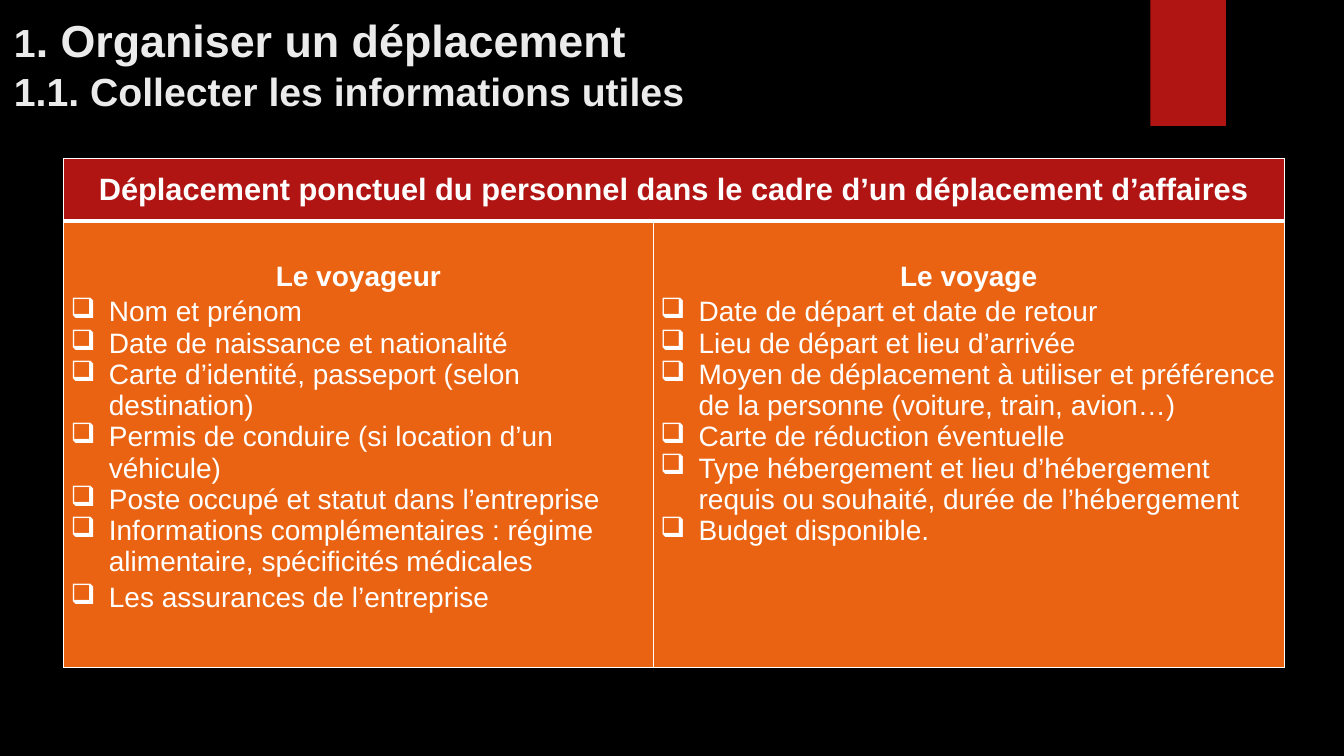
from lxml.etree import SubElement
from pptx import Presentation
from pptx.dml.color import RGBColor
from pptx.enum.shapes import MSO_SHAPE
from pptx.enum.text import MSO_ANCHOR as Anchor, PP_ALIGN as Align
from pptx.oxml.ns import qn
from pptx.util import Inches, Pt

BLACK = RGBColor(0x00, 0x00, 0x00)
WHITE = RGBColor(0xFF, 0xFF, 0xFF)
PALE = RGBColor(0xEB, 0xEB, 0xEB)
RED = RGBColor(0xB0, 0x15, 0x13)
ORANGE = RGBColor(0xEA, 0x63, 0x12)

TITLE = [
    [("1", 28), (". Organiser un déplacement", 32)],
    [("1.1. Collecter les informations utiles", 28)],
]
TABLE_HEADING = "Déplacement ponctuel du personnel dans le cadre d’un déplacement d’affaires"
TOPICS = {
    "Le voyageur": [
        "Nom et prénom",
        "Date de naissance et nationalité",
        "Carte d’identité, passeport (selon destination)",
        "Permis de conduire (si location d’un véhicule)",
        "Poste occupé et statut dans l’entreprise",
        "Informations complémentaires : régime alimentaire, spécificités médicales",
        "Les assurances de l’entreprise",
    ],
    "Le voyage": [
        "Date de départ et date de retour",
        "Lieu de départ et lieu d’arrivée",
        "Moyen de déplacement à utiliser et préférence de la personne (voiture, train, avion…)",
        "Carte de réduction éventuelle",
        "Type hébergement et lieu d’hébergement requis ou souhaité, durée de l’hébergement",
        "Budget disponible.",
    ],
}
SPACED_ITEMS = {"Informations complémentaires : régime alimentaire, spécificités médicales"}


class Deck:
    font = "Arial"
    hanging = Inches(0.38)
    side_margin = Inches(0.07)

    def __init__(self):
        self.prs = Presentation()
        self.prs.slide_width, self.prs.slide_height = Inches(13.33), Inches(7.5)
        self.slide = self.prs.slides.add_slide(self.prs.slide_layouts[6])
        self.slide.background.fill.solid()
        self.slide.background.fill.fore_color.rgb = BLACK

    def across(self, percent):
        return round(self.prs.slide_width * percent / 100)

    def down(self, percent):
        return round(self.prs.slide_height * percent / 100)

    def area(self, left, top, width, height):
        return self.across(left), self.down(top), self.across(width), self.down(height)

    def add_text(self, paragraph, text, size, color=WHITE, bold=False):
        run = paragraph.add_run()
        run.text = text
        run.font.name, run.font.size = self.font, Pt(size)
        run.font.bold, run.font.color.rgb = bold, color

    def block(self, area, color):
        block = self.slide.shapes.add_shape(MSO_SHAPE.RECTANGLE, *self.area(*area))
        block.shadow.inherit = False
        block.fill.solid()
        block.fill.fore_color.rgb = color
        block.line.fill.background()

    def title(self, area, lines):
        frame = self.slide.shapes.add_textbox(*self.area(*area)).text_frame
        frame.word_wrap = True
        frame.vertical_anchor = Anchor.BOTTOM
        paragraph = frame.paragraphs[0]
        for number, line in enumerate(lines):
            if number:
                paragraph.add_line_break()
            for text, size in line:
                self.add_text(paragraph, text, size, PALE, True)

    def table(self, left, top, columns, rows):
        area = self.area(left, top, sum(columns), sum(rows))
        table = self.slide.shapes.add_table(len(rows), len(columns), *area).table
        table.first_row = table.horz_banding = False
        for column, width in zip(table.columns, columns):
            column.width = self.across(width)
        for row, height in zip(table.rows, rows):
            row.height = self.down(height)
        return table

    def style_cell(self, cell, color, top_margin=0, **borders):
        cell.margin_left = cell.margin_right = self.side_margin
        cell.margin_top, cell.margin_bottom = top_margin, 0
        properties = cell._tc.get_or_add_tcPr()
        for side in "LRTB":
            line = SubElement(properties, qn(f"a:ln{side}"), w=str(Pt(borders.get(side, 1))))
            fill = SubElement(line, qn("a:solidFill"))
            SubElement(fill, qn("a:srgbClr"), val=str(WHITE))
        cell.fill.solid()
        cell.fill.fore_color.rgb = color

    def heading(self, cell, text, size):
        paragraph = cell.text_frame.paragraphs[0]
        paragraph.alignment = Align.CENTER
        self.add_text(paragraph, text, size, bold=True)
        return paragraph

    def bullet(self, cell, text):
        paragraph = cell.text_frame.add_paragraph()
        properties = paragraph._p.get_or_add_pPr()
        properties.set("marL", str(self.hanging))
        properties.set("indent", str(-self.hanging))
        SubElement(properties, qn("a:buChar"), char="❑")
        if text in SPACED_ITEMS:
            paragraph.space_after = Pt(3)
        self.add_text(paragraph, text, 20)


def main():
    deck = Deck()
    deck.block((85.59, 0, 5.63, 16.67), RED)
    deck.title((0.3, 0.8, 83.93, 14.93), TITLE)

    checklist = deck.table(4.73, 20.93, (43.88, 46.95), (8.27, 59.07))
    for cell in checklist.rows[0].cells:
        deck.style_cell(cell, RED, B=3)
    banner = checklist.cell(0, 0)
    banner.merge(checklist.cell(0, 1))
    banner.vertical_anchor = Anchor.MIDDLE
    deck.heading(banner, TABLE_HEADING, 22)

    for cell, (topic, items) in zip(checklist.rows[1].cells, TOPICS.items()):
        deck.style_cell(cell, ORANGE, Inches(0.4), T=3)
        deck.heading(cell, topic, 20).space_after = Pt(3)
        for item in items:
            deck.bullet(cell, item)

    deck.prs.save("out.pptx")


if __name__ == "__main__":
    main()
